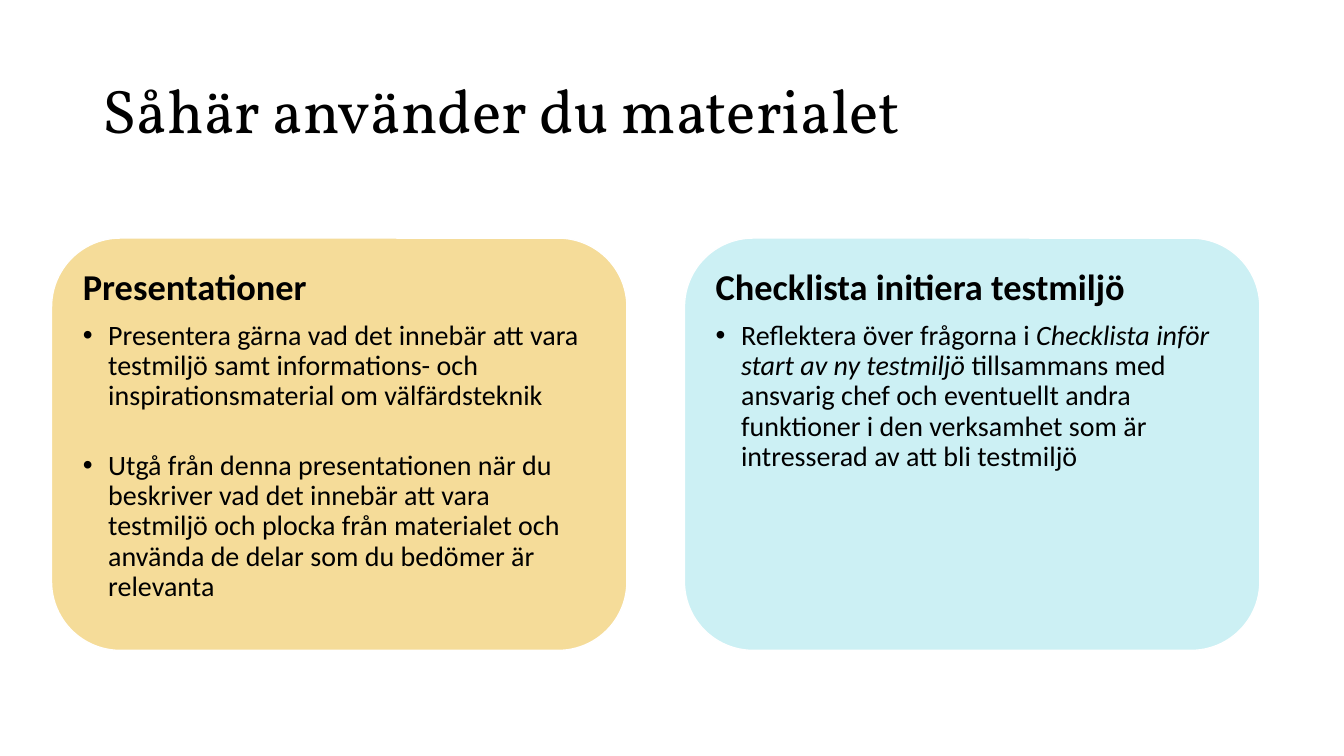
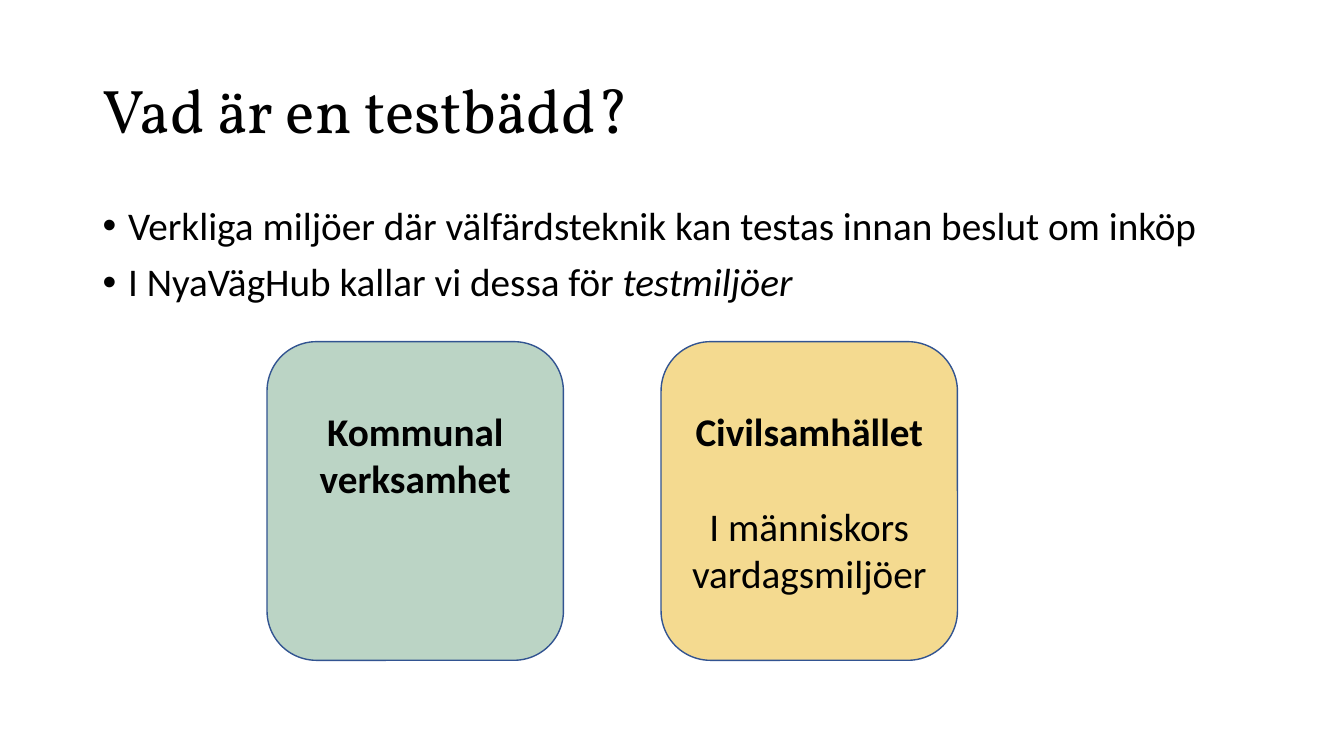
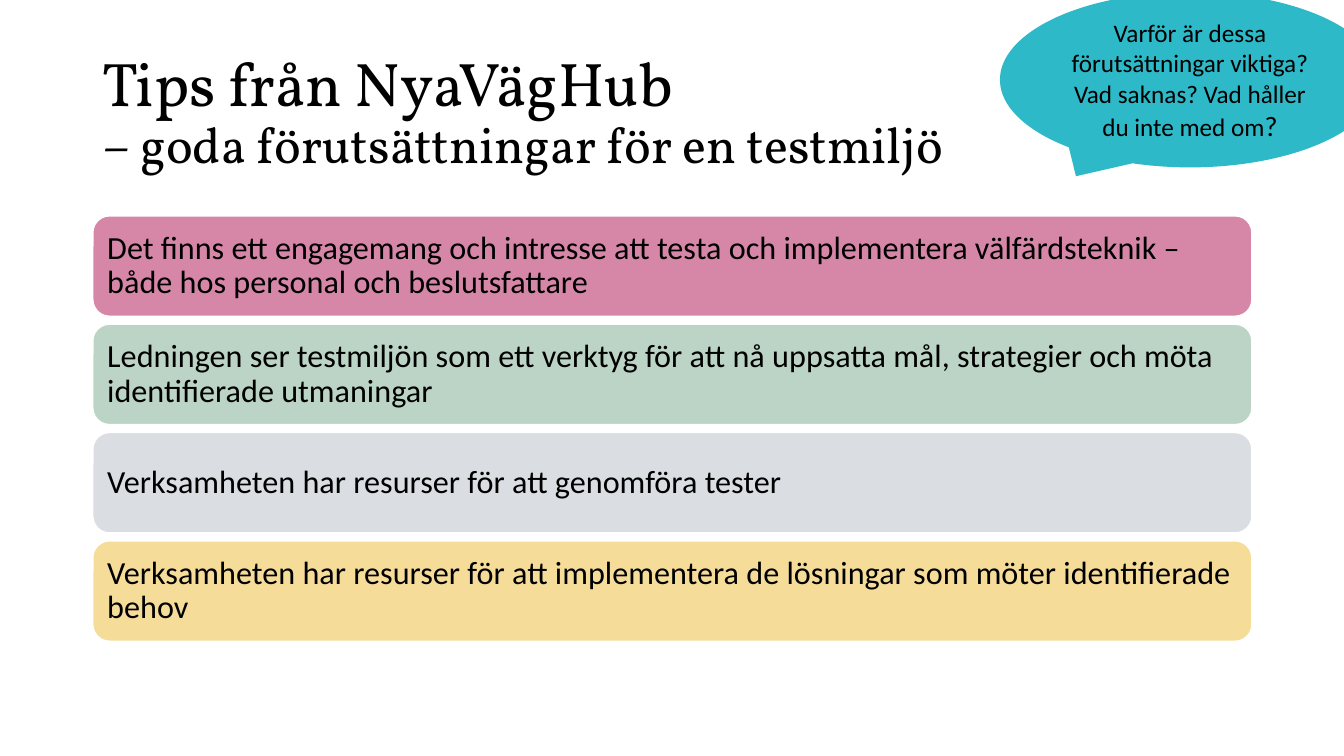
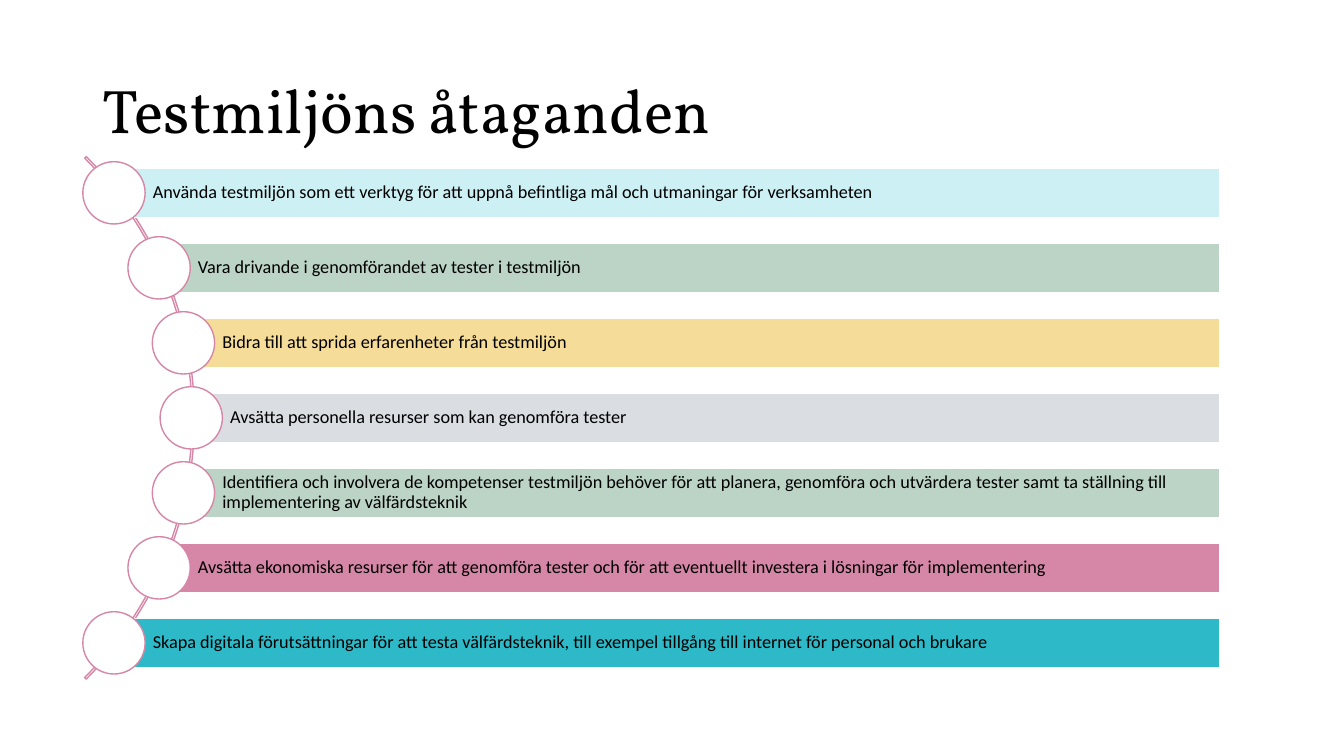
from math import sqrt

from lxml import etree
from pptx import Presentation
from pptx.dml.color import RGBColor
from pptx.enum.shapes import MSO_SHAPE
from pptx.enum.text import MSO_ANCHOR, PP_ALIGN
from pptx.oxml.ns import qn
from pptx.util import Cm, Pt

ROUNDED = MSO_SHAPE.ROUNDED_RECTANGLE
RECTANGLE = MSO_SHAPE.RECTANGLE
OVAL = MSO_SHAPE.OVAL
ARC = MSO_SHAPE.BLOCK_ARC
CALLOUT = MSO_SHAPE.OVAL_CALLOUT
TOP, MIDDLE = MSO_ANCHOR.TOP, MSO_ANCHOR.MIDDLE
CENTER, LEFT = PP_ALIGN.CENTER, PP_ALIGN.LEFT

TITLE_FONT, BODY_FONT = "Vollkorn", "Calibri"
BLACK, WHITE = "000000", "FFFFFF"
YELLOW, DEEP_YELLOW = "F5DC99", "F4DA90"
PALE_BLUE, TEAL, NAVY = "CCF0F4", "2DB9C7", "325491"
GREEN, PINK, GREY = "BBD4C5", "D687A7", "DADDE2"


def add_shape(s, kind, x, y, w, h, fill=None, line=None, anchor=MIDDLE, margins=None):
    """Add a flat shape; lengths and margins (left, top, right, bottom) are in cm."""
    sp = s.shapes.add_shape(kind, Cm(x), Cm(y), Cm(w), Cm(h))
    sp.shadow.inherit = False
    if fill:
        sp.fill.solid()
        sp.fill.fore_color.rgb = RGBColor.from_string(fill)
    else:
        sp.fill.background()
    if line:
        sp.line.color.rgb = RGBColor.from_string(line)
        sp.line.width = Pt(1)
    else:
        sp.line.fill.background()
    tf = sp.text_frame
    tf.word_wrap = True
    tf.vertical_anchor = anchor
    if margins:
        tf.margin_left, tf.margin_top, tf.margin_right, tf.margin_bottom = map(Cm, margins)
    return sp


def add_paragraph(tf, texts, size, font=BODY_FONT, bold=False, bullet=False,
                  align=LEFT, spacing=0.9, before=0, after=0):
    """Write one paragraph with a run for each text, filling an empty frame first."""
    p = tf.paragraphs[0] if not tf.text else tf.add_paragraph()
    if bullet:
        pPr = p._p.get_or_add_pPr()
        pPr.set("marL", str(Cm(0.64)))
        pPr.set("indent", str(-Cm(0.64)))
        etree.SubElement(pPr, qn("a:buFont")).set("typeface", "Arial")
        etree.SubElement(pPr, qn("a:buChar")).set("char", "•")
    p.alignment = align
    p.line_spacing = spacing
    p.space_before, p.space_after = Pt(before), Pt(after)
    for text in texts:
        r = p.add_run()
        r.text = text
        r.font.name = font
        r.font.size = Pt(size)
        r.font.bold = bold
        r.font.color.rgb = RGBColor.from_string(BLACK)
    return p


prs = Presentation()
prs.slide_width, prs.slide_height = Cm(33.87), Cm(19.05)

# Slides and their titles
titles = [
    [("Såhär använder du materialet", 44)],
    [("Vad är en testbädd?", 44)],
    [("Tips från NyaVägHub", 44), ("– goda förutsättningar för en testmiljö", 36)],
    [("Testmiljöns åtaganden", 44)],
]
slides = []
for title in titles:
    s = prs.slides.add_slide(prs.slide_layouts[6])
    tf = s.shapes.add_textbox(Cm(2.34), Cm(1.02), Cm(29.21), Cm(3.68)).text_frame
    tf.word_wrap = True
    tf.vertical_anchor = MIDDLE
    for text, size in title:
        add_paragraph(tf, [text], size, font=TITLE_FONT)
    slides.append(s)
usage, testbed, tips, commitments = slides

# Slide 1: two cards
cards = [
    (YELLOW, "Presentationer", [
        ["Presentera gärna vad det innebär att vara testmiljö samt informations- och "
         "inspirationsmaterial om välfärdsteknik"],
        ["Utgå från denna presentationen när du beskriver vad det innebär att vara testmiljö "
         "och plocka från materialet och använda de delar som du bedömer är relevanta"],
    ]),
    (PALE_BLUE, "Checklista initiera testmiljö", [
        ["Reflektera över frågorna i ", "Checklista inför start av ny testmiljö ",
         "tillsammans med ansvarig chef och eventuellt andra funktioner i den verksamhet "
         "som är intresserad av att bli testmiljö"],
    ]),
]
for i, (fill, heading, points) in enumerate(cards):
    sp = add_shape(usage, ROUNDED, 1.3 + 15.95 * i, 6, 14.5, 10.39, fill, WHITE,
                   TOP, [0.28] * 4)
    tf = sp.text_frame
    add_paragraph(tf, [heading], 26, bold=True, after=9)
    for texts in points:
        p = add_paragraph(tf, texts, 20, bullet=True, after=28)
        for r in p.runs[1:2]:
            r.font.italic = True

# Slide 2: definition and two kinds of environment
tf = testbed.shapes.add_textbox(Cm(2.34), Cm(5.08), Cm(29.21), Cm(3.2)).text_frame
tf.word_wrap = True
add_paragraph(tf, ["Verkliga miljöer där välfärdsteknik kan testas innan beslut om inköp"],
              28, bullet=True)
p = add_paragraph(tf, ["I NyaVägHub kallar vi dessa för ", "testmiljöer"],
                  28, bullet=True, before=10)
p.runs[1].font.italic = True

environments = [
    (GREEN, "Kommunal verksamhet", None),
    (DEEP_YELLOW, "Civilsamhället", "I människors vardagsmiljöer"),
]
for i, (fill, name, detail) in enumerate(environments):
    sp = add_shape(testbed, ROUNDED, 6.73 + 9.93 * i, 8.61, 7.47, 8.03, fill, NAVY,
                   TOP, (0.25, 1.3, 0.25, 0.13))
    add_paragraph(sp.text_frame, [name], 28, bold=True, align=CENTER, spacing=1)
    if detail:
        add_paragraph(sp.text_frame, [detail], 28, align=CENTER, spacing=1, before=34)

# Slide 3: tips and a question
conditions = [
    (PINK, "Det finns ett engagemang och intresse att testa och implementera "
           "välfärdsteknik – både hos personal och beslutsfattare"),
    (GREEN, "Ledningen ser testmiljön som ett verktyg för att nå uppsatta mål, "
            "strategier och möta identifierade utmaningar"),
    (GREY, "Verksamheten har resurser för att genomföra tester"),
    (YELLOW, "Verksamheten har resurser för att implementera de lösningar som möter "
             "identifierade behov"),
]
for i, (fill, text) in enumerate(conditions):
    sp = add_shape(tips, ROUNDED, 2.34, 5.44 + 2.73 * i, 29.21, 2.53, fill, WHITE,
                   margins=[0.24] * 4)
    add_paragraph(sp.text_frame, [text], 23)

sp = add_shape(tips, CALLOUT, 25.2, -0.2, 9.58, 4.42, TEAL)
sp.adjustments[0], sp.adjustments[1] = -0.3, 0.55
p = add_paragraph(sp.text_frame, [
    "Varför är dessa förutsättningar viktiga? Vad saknas? Vad håller du inte med om", "?",
], 18, align=CENTER, spacing=1)
p.runs[1].font.size = Pt(20)

# Slide 4: bars whose circles follow an arc
promises = [
    (PALE_BLUE, "Använda testmiljön som ett verktyg för att uppnå befintliga mål och "
                "utmaningar för verksamheten"),
    (GREEN, "Vara drivande i genomförandet av tester i testmiljön"),
    (YELLOW, "Bidra till att sprida erfarenheter från testmiljön"),
    (GREY, "Avsätta personella resurser som kan genomföra tester"),
    (GREEN, "Identifiera och involvera de kompetenser testmiljön behöver för att planera, "
            "genomföra och utvärdera tester samt ta ställning till implementering av "
            "välfärdsteknik"),
    (PINK, "Avsätta ekonomiska resurser för att genomföra tester och för att eventuellt "
           "investera i lösningar för implementering"),
    (TEAL, "Skapa digitala förutsättningar för att testa välfärdsteknik, till exempel "
           "tillgång till internet för personal och brukare"),
]
arc_x, arc_y, arc_radius = -4.41, 10.53, 9.31
circle_path_radius = 9.23
bar_right, bar_height, bar_pitch, circle_size = 30.75, 1.24, 1.89, 1.57

arc = add_shape(commitments, ARC, arc_x - arc_radius, arc_y - arc_radius,
                2 * arc_radius, 2 * arc_radius, line=PINK)
arc.adjustments[0], arc.adjustments[1], arc.adjustments[2] = 189, 27, 0.003

for i, (fill, text) in enumerate(promises):
    offset = (i - len(promises) // 2) * bar_pitch
    x = arc_x + sqrt(circle_path_radius ** 2 - offset ** 2)
    y = arc_y + offset
    sp = add_shape(commitments, RECTANGLE, x, y - bar_height / 2, bar_right - x, bar_height,
                   fill, WHITE, margins=(0.98, 0.09, 0.09, 0.09))
    add_paragraph(sp.text_frame, [text], 13)
    add_shape(commitments, OVAL, x - circle_size / 2, y - circle_size / 2,
              circle_size, circle_size, WHITE, PINK)

prs.save("out.pptx")
